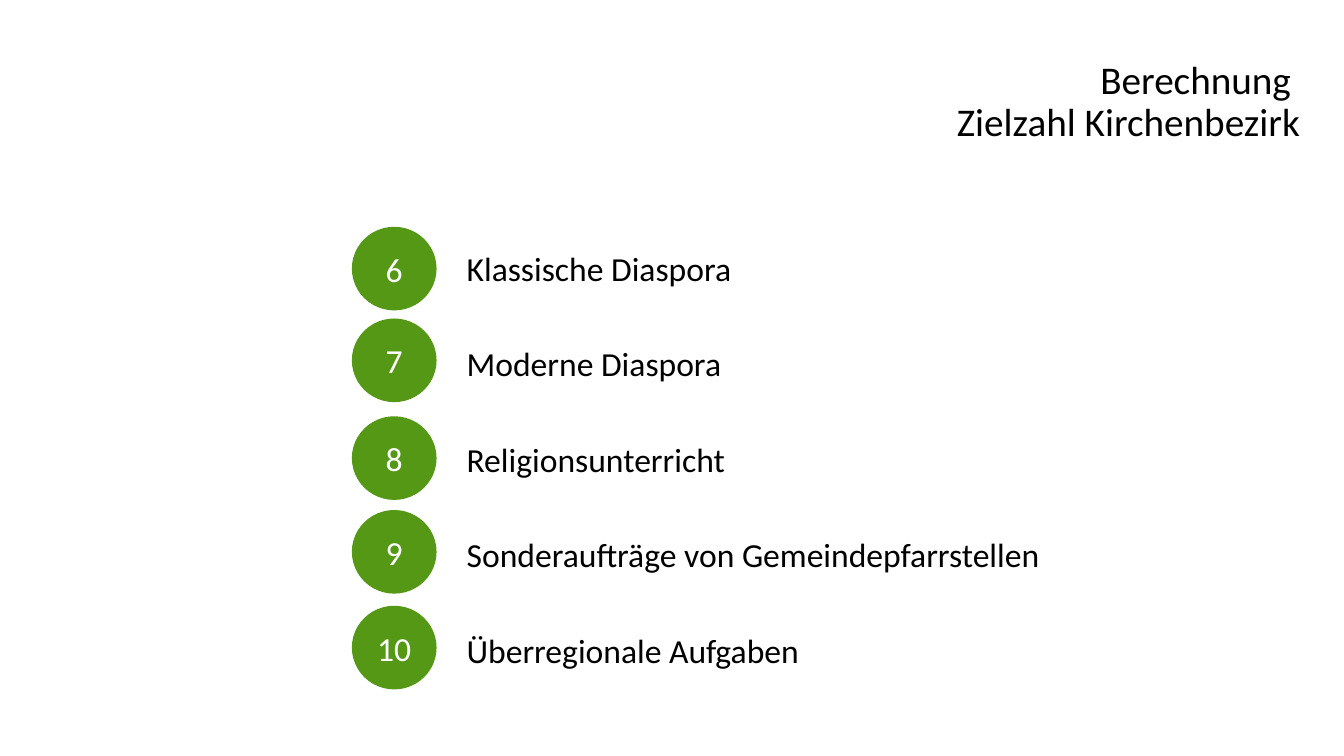
from dataclasses import dataclass

from pptx import Presentation
from pptx import util as u
from pptx.dml.color import RGBColor
from pptx.enum import shapes, text


@dataclass(frozen=True)
class Theme:
    font: str = "Calibri"
    ink: RGBColor = RGBColor(0x00, 0x00, 0x00)
    paper: RGBColor = RGBColor(0xFF, 0xFF, 0xFF)
    green: RGBColor = RGBColor(0x55, 0x98, 0x15)
    title_size: int = 28
    item_size: int = 24


theme = Theme()


def write(box, words, size=theme.item_size, color=theme.ink,
          align=text.PP_ALIGN.LEFT, spacing=None):
    """Put one middle-anchored paragraph into a box; a newline breaks the line."""
    frame = box.text_frame
    frame.word_wrap = True
    frame.vertical_anchor = text.MSO_ANCHOR.MIDDLE
    para = frame.paragraphs[0]
    para.text = words
    para.alignment = align
    para.line_spacing = spacing
    for span in para.runs:
        span.font.name = theme.font
        span.font.size = u.Pt(size)
        span.font.color.rgb = color


def add_filled(kind, left, top, width, height, fill):
    """Add a flat shape without outline or shadow."""
    box = page.shapes.add_shape(kind, u.Inches(left), u.Inches(top),
                                u.Inches(width), u.Inches(height))
    box.shadow.inherit = False
    box.fill.solid()
    box.fill.fore_color.rgb = fill
    box.line.fill.background()
    return box


# Page
deck = Presentation()
deck.slide_width = u.Inches(13.33)
deck.slide_height = u.Inches(7.5)
page = deck.slides.add_slide(deck.slide_layouts[6])

# Items: label and top of its numbered circle
items = [
    ("Klassische Diaspora", 2.25),
    ("Moderne Diaspora", 3.16),
    ("Religionsunterricht", 4.13),
    ("Sonderaufträge von Gemeindepfarrstellen", 5.06),
    ("Überregionale Aufgaben", 6.01),
]
first_number = 6
label_top, label_pitch = 2.31, 0.9475

# Labels, evenly spaced
for row, (label, _) in enumerate(items):
    bar = add_filled(shapes.MSO_SHAPE.RECTANGLE, 4.53,
                     label_top + row * label_pitch, 8.8, 0.74, theme.paper)
    write(bar, label, spacing=0.9)

# Numbered circles
for number, (_, circle_top) in enumerate(items, start=first_number):
    circle = add_filled(shapes.MSO_SHAPE.OVAL, 3.49, circle_top, 0.84, 0.83,
                        theme.green)
    write(circle, str(number), color=theme.paper, align=text.PP_ALIGN.CENTER)

# Heading
heading = page.shapes.add_textbox(u.Inches(6.77), u.Inches(0.55),
                                  u.Inches(6.22), u.Inches(0.94))
write(heading, "Berechnung \nZielzahl Kirchenbezirk", size=theme.title_size,
      align=text.PP_ALIGN.RIGHT, spacing=0.9)

deck.save("out.pptx")
